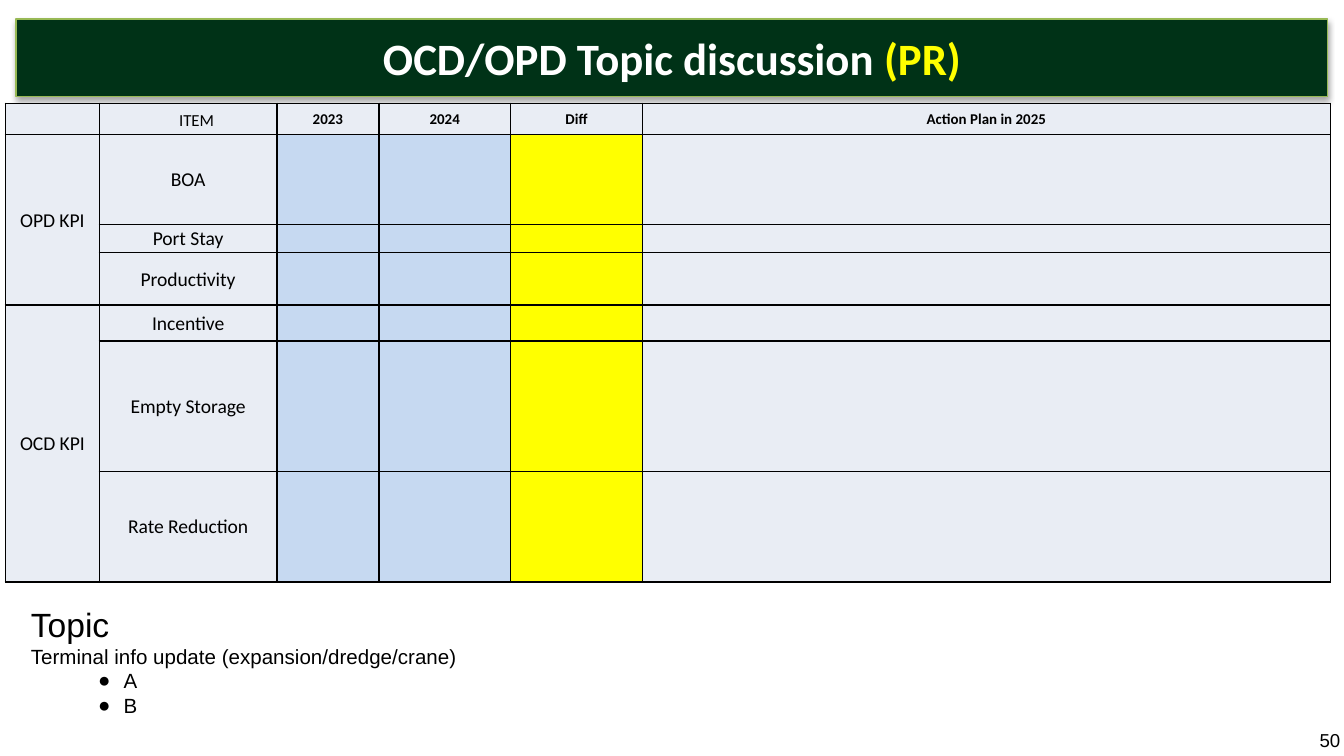
from dataclasses import dataclass

from lxml.etree import SubElement
from pptx import Presentation
from pptx.dml.color import RGBColor
from pptx.enum.text import MSO_ANCHOR as Anchor, MSO_AUTO_SIZE as AutoSize, PP_ALIGN as Align
from pptx.oxml.ns import qn
from pptx.util import Inches, Pt


@dataclass(frozen=True)
class Theme:
    heading_font: str = "Calibri"
    body_font: str = "Arial"
    black: str = "000000"
    white: str = "FFFFFF"
    yellow: str = "FFFF00"
    banner: str = "003217"
    banner_edge: str = "98B955"
    pale: str = "E9EDF4"
    blue: str = "C6D9F1"
    title_size: float = 24
    item_size: float = 9
    header_size: float = 8
    label_size: float = 10.5
    topic_size: float = 18
    detail_size: float = 11
    page_size: float = 10


THEME = Theme()

HEADERS = ["", "　ITEM", "2023", "2024", "Diff", "Action Plan in 2025"]
COLUMN_WIDTHS = [0.7, 1.32, 0.76, 0.98, 0.98, 5.12]
COLUMN_FILLS = [THEME.pale, THEME.pale, THEME.blue, THEME.blue, THEME.yellow, THEME.pale]
HEADER_HEIGHT = 0.23
KPI_GROUPS = {
    "OPD KPI": [("BOA", 0.67), ("Port Stay", 0.21), ("Productivity", 0.39)],
    "OCD KPI": [("Incentive", 0.27), ("Empty Storage", 0.97), ("Rate Reduction", 0.82)],
}


def rgb(color):
    return RGBColor.from_string(color)


def place(shape, left, top, width, height):
    shape.left, shape.top = Inches(left), Inches(top)
    shape.width, shape.height = Inches(width), Inches(height)


def set_font(font, name, size, bold=False, color=THEME.black):
    font.name, font.size, font.bold = name, Pt(size), bold
    font.color.rgb = rgb(color)


def add_banner_shadow(banner):
    banner.shadow.inherit = False
    effects = banner._element.spPr.find(qn("a:effectLst"))
    shadow = SubElement(effects, qn("a:outerShdw"), blurRad=str(Pt(3.1)),
                        dist=str(Pt(1.8)), dir="5400000", rotWithShape="0")
    shade = SubElement(shadow, qn("a:srgbClr"), val=THEME.black)
    SubElement(shade, qn("a:alpha"), val="35000")


def fill_banner(banner):
    place(banner, 0.12, 0.14, 9.76, 0.58)
    banner.fill.solid()
    banner.fill.fore_color.rgb = rgb(THEME.banner)
    banner.line.color.rgb = rgb(THEME.banner_edge)
    banner.line.width = Pt(0.75)
    add_banner_shadow(banner)

    frame = banner.text_frame
    frame.auto_size = AutoSize.NONE
    frame.vertical_anchor = Anchor.MIDDLE
    frame.margin_left = frame.margin_right = frame.margin_top = frame.margin_bottom = 0
    heading = frame.paragraphs[0]
    heading.alignment = Align.CENTER
    set_font(heading.font, THEME.heading_font, THEME.title_size, True, THEME.white)
    for words, color in [("OCD/OPD Topic discussion ", THEME.white), ("(PR)", THEME.yellow)]:
        run = heading.add_run()
        run.text = words
        run.font.color.rgb = rgb(color)


def add_borders(cell):
    properties = cell._tc.get_or_add_tcPr()
    for side in ("a:lnL", "a:lnR", "a:lnT", "a:lnB"):
        border = SubElement(properties, qn(side), w=str(Pt(1)))
        ink = SubElement(border, qn("a:solidFill"))
        SubElement(ink, qn("a:srgbClr"), val=THEME.black)


def format_cell(cell, words, fill, size, bold=False):
    add_borders(cell)
    cell.fill.solid()
    cell.fill.fore_color.rgb = rgb(fill)
    cell.margin_left = cell.margin_right = cell.margin_top = Inches(0.01)
    cell.margin_bottom = 0
    cell.vertical_anchor = Anchor.MIDDLE
    cell.text = words
    label = cell.text_frame.paragraphs[0]
    label.alignment = Align.CENTER
    set_font(label.font, THEME.heading_font, size, bold)
    if not words:
        # Small type keeps blank cells from stretching their row
        SubElement(label._p, qn("a:endParaRPr"), sz=str(int(size * 100)))


def add_kpi_table(slide):
    items = [item for group in KPI_GROUPS.values() for item in group]
    heights = [HEADER_HEIGHT] + [height for _, height in items]
    table = slide.shapes.add_table(
        len(heights), len(HEADERS), Inches(0.04), Inches(0.77),
        Inches(sum(COLUMN_WIDTHS)), Inches(sum(heights))).table
    table.first_row = table.horz_banding = False
    for column, width in zip(table.columns, COLUMN_WIDTHS):
        column.width = Inches(width)
    for row, height in zip(table.rows, heights):
        row.height = Inches(height)

    # Header row
    for column, header in enumerate(HEADERS):
        is_item = column == 1
        size = THEME.item_size if is_item else THEME.header_size
        format_cell(table.cell(0, column), header, THEME.pale, size, not is_item)

    # KPI rows, with the group name spanning its items
    first = 1
    for group, members in KPI_GROUPS.items():
        for offset, (item, _) in enumerate(members):
            labels = [group if offset == 0 else "", item, "", "", "", ""]
            for column, (label, fill) in enumerate(zip(labels, COLUMN_FILLS)):
                format_cell(table.cell(first + offset, column), label, fill, THEME.label_size)
        last = first + len(members) - 1
        table.cell(first, 0).merge(table.cell(last, 0))
        first = last + 1


def set_bullet(paragraph, bullet):
    properties = paragraph._p.get_or_add_pPr()
    left, indent = (0.69, -0.19) if bullet else (0, 0)
    properties.set("marL", str(Inches(left)))
    properties.set("indent", str(Inches(indent)))
    if bullet:
        SubElement(properties, qn("a:buChar"), char=bullet)
    else:
        SubElement(properties, qn("a:buNone"))


def fill_topic(body):
    place(body, 0.13, 4.44, 9.76, 1.33)
    frame = body.text_frame
    frame.auto_size = AutoSize.SHAPE_TO_FIT_TEXT
    frame.vertical_anchor = Anchor.TOP
    lines = [
        ("Topic", THEME.topic_size, None),
        ("Terminal info update (expansion/dredge/crane)", THEME.detail_size, None),
        ("A", THEME.detail_size, "●"),
        ("B", THEME.detail_size, "●"),
    ]
    for index, (words, size, bullet) in enumerate(lines):
        line = frame.add_paragraph() if index else frame.paragraphs[0]
        line.text = words
        line.level = 1 if bullet else 0
        line.space_before = Pt(0)
        set_bullet(line, bullet)
        set_font(line.font, THEME.body_font, size)


def add_page_number(slide, number):
    box = slide.shapes.add_textbox(Inches(9.72), Inches(5.39), Inches(0.64), Inches(0.23))
    frame = box.text_frame
    frame.word_wrap = True
    frame.vertical_anchor = Anchor.MIDDLE
    frame.text = number
    set_font(frame.paragraphs[0].font, THEME.body_font, THEME.page_size)


def main():
    deck = Presentation()
    # Widescreen, 16:9
    deck.slide_width = Inches(10)
    deck.slide_height = deck.slide_width * 9 // 16
    slide = deck.slides.add_slide(deck.slide_layouts[1])
    fill_banner(slide.shapes.title)
    add_kpi_table(slide)
    add_page_number(slide, "50")
    fill_topic(slide.placeholders[1])
    deck.save("out.pptx")


if __name__ == "__main__":
    main()
